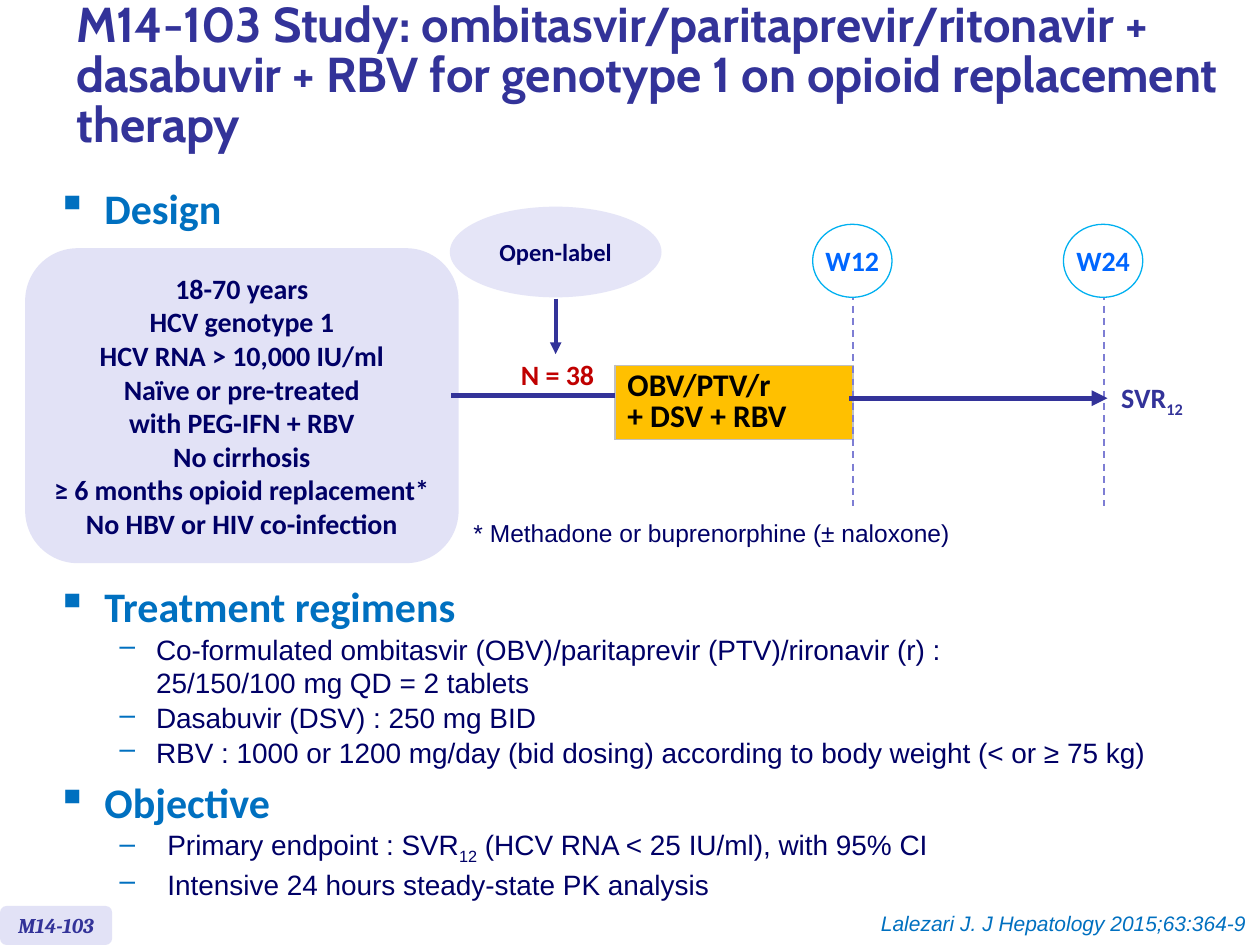
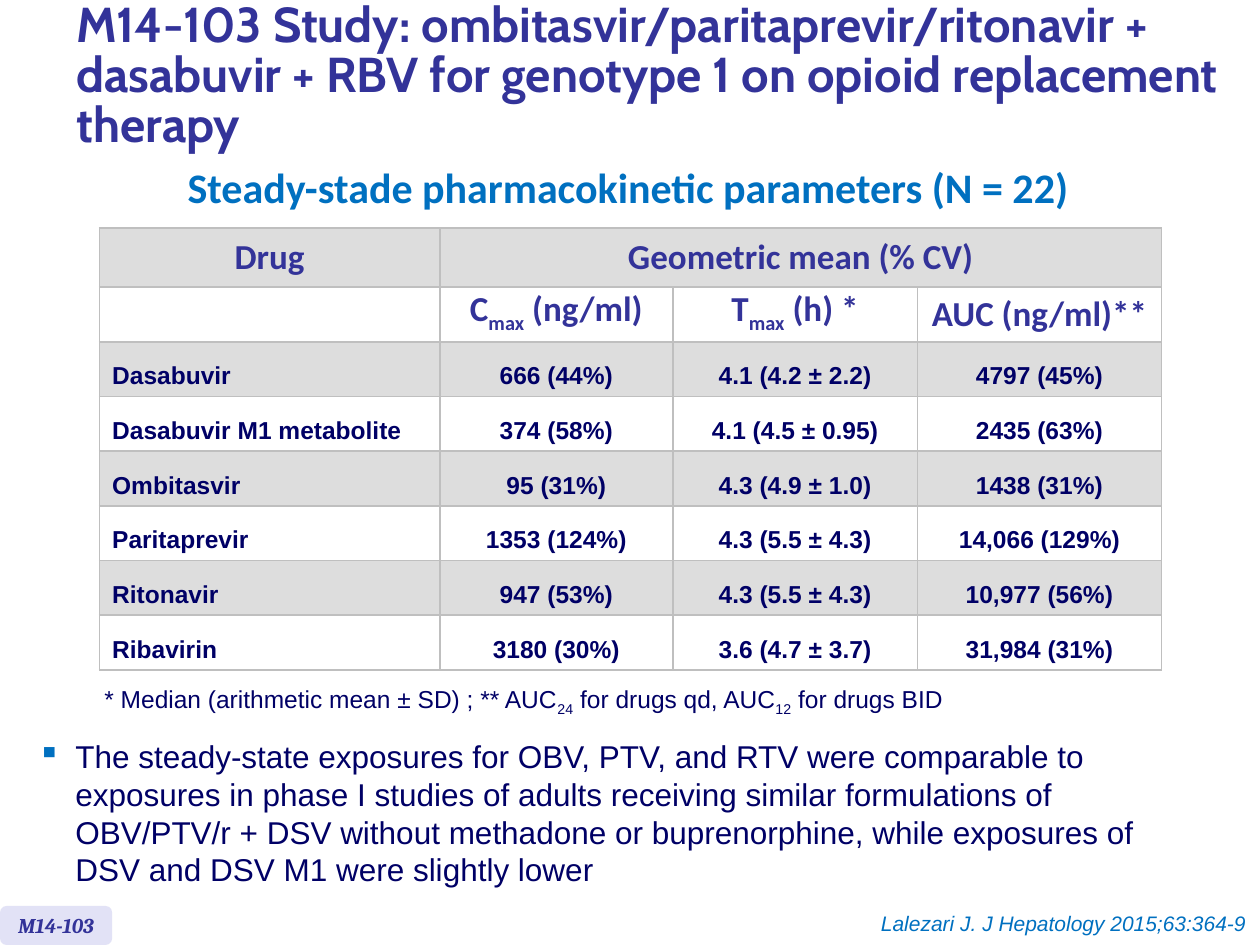
from copy import deepcopy
from dataclasses import dataclass, replace

from lxml import etree
from pptx import Presentation
from pptx import util as u
from pptx.dml.color import RGBColor
from pptx.enum import dml, shapes, text
from pptx.oxml import ns

PX = 9144  # EMU per px, 100 px to the inch

# Colours
INDIGO = RGBColor(0x33, 0x33, 0x99)
NAVY = RGBColor(0x00, 0x00, 0x66)
BLUE = RGBColor(0x00, 0x70, 0xC0)
SKY = RGBColor(0x00, 0xB0, 0xF0)
WEEK_BLUE = RGBColor(0x00, 0x66, 0xFF)
VIOLET = RGBColor(0x7E, 0x7E, 0xD4)
LAVENDER = RGBColor(0xE2, 0xE2, 0xF6)
PALE_LAVENDER = RGBColor(0xE5, 0xE5, 0xF7)
RED = RGBColor(0xC0, 0x00, 0x00)
AMBER = RGBColor(0xFF, 0xC0, 0x00)
BLACK = RGBColor(0x00, 0x00, 0x00)
WHITE = RGBColor(0xFF, 0xFF, 0xFF)
BAND_GREY = RGBColor(0xDD, 0xDD, 0xDD)
GRID_GREY = RGBColor(0xBF, 0xBF, 0xBF)
BOX_GREY = RGBColor(0xC0, 0xC0, 0xC0)

LEFT, CENTER, RIGHT = text.PP_ALIGN.LEFT, text.PP_ALIGN.CENTER, text.PP_ALIGN.RIGHT
MIDDLE = text.MSO_ANCHOR.MIDDLE
OVAL, ROUNDED = shapes.MSO_SHAPE.OVAL, shapes.MSO_SHAPE.ROUNDED_RECTANGLE


@dataclass(frozen=True)
class Style:
    """Look of one paragraph; indent is (text, bullet offset) in px."""
    size: int
    color: RGBColor
    font: str = "Calibri"
    bold: bool = True
    italic: bool = False
    align: object = LEFT
    bullet: str = ""
    indent: tuple = (0, 0)
    level: int = 0
    leading: object = None
    before: float = 0
    after: float = 0


TITLE = Style(28, INDIGO, "Cabin", leading=0.85)
HEADING = Style(24, BLUE, bullet="▪", indent=(38, 38), before=0.7)
ITEM = Style(16, NAVY, "Arial", False, bullet="–", indent=(79, 29), level=1, before=0.7)
WIDE_ITEM = replace(ITEM, indent=(88, 38))
BODY = Style(18, NAVY, "Arial", False, bullet="▪", indent=(30, 30))
NOTE = Style(14, NAVY, "Arial", False)
LABEL = Style(16, NAVY, align=CENTER)
TABLE_HEAD = Style(20, INDIGO, align=CENTER, leading=u.Pt(24), after=6)
TABLE_BODY = replace(TABLE_HEAD, size=14, color=NAVY, font="Arial")


class Deck:
    def __init__(self):
        self.prs = Presentation()
        self.prs.slide_width, self.prs.slide_height = 1000 * PX, 750 * PX
        self.s = None

    def slide(self):
        """Start a slide with the shared title, study tag and reference."""
        self.s = self.prs.slides.add_slide(self.prs.slide_layouts[6])
        title = ("M14-103 Study: ombitasvir/paritaprevir/ritonavir + dasabuvir + RBV "
                 "for genotype 1 on opioid replacement therapy")
        self.text((51, 8, 948, 107), [(title, TITLE)], anchor=MIDDLE)
        tag = replace(LABEL, size=12, color=INDIGO, font="Cambria", italic=True)
        self.shape(ROUNDED, (0, 719, 89, 31), LAVENDER, ["M14-103"], tag)
        ref = Style(12, BLUE, "Arial", False, True, RIGHT)
        self.text((682, 718, 317, 30), [("Lalezari J. J Hepatology 2015;63:364-9", ref)], wrap=False)

    def paragraph(self, p, words, st):
        """Fill a paragraph; parts between underscores are subscripts."""
        if "_" in words:
            for i, part in enumerate(words.split("_")):
                r = p.add_run()
                r.text = part
                if i % 2:
                    r.font._element.set("baseline", "-25000")
        else:
            p.text = words
        p.alignment, p.level = st.align, st.level
        p.space_before, p.space_after = u.Pt(st.before), u.Pt(st.after)
        if st.leading:
            p.line_spacing = st.leading
        if st.bullet:
            pPr = p._p.get_or_add_pPr()
            pPr.set("marL", str(st.indent[0] * PX))
            pPr.set("indent", str(-st.indent[1] * PX))
            clr = etree.SubElement(pPr, ns.qn("a:buClr"))
            etree.SubElement(clr, ns.qn("a:srgbClr"), val=str(BLUE))
            etree.SubElement(pPr, ns.qn("a:buChar"), char=st.bullet)
        for r in p.runs:
            f = r.font
            f.name, f.size, f.bold, f.italic = st.font, u.Pt(st.size), st.bold, st.italic
            f.color.rgb = st.color
        for br in p._p.findall(ns.qn("a:br")):
            br.append(deepcopy(p.runs[0].font._element))

    def fill_frame(self, tf, lines):
        for i, (words, st) in enumerate(lines):
            p = tf.add_paragraph() if i else tf.paragraphs[0]
            self.paragraph(p, words, st if i else replace(st, before=0))

    def text(self, box, lines, wrap=True, anchor=text.MSO_ANCHOR.TOP, pad=5):
        tf = self.s.shapes.add_textbox(*(v * PX for v in box)).text_frame
        tf.word_wrap, tf.vertical_anchor = wrap, anchor
        tf.margin_top = tf.margin_bottom = pad * PX
        if not wrap:
            tf.auto_size = text.MSO_AUTO_SIZE.SHAPE_TO_FIT_TEXT
        self.fill_frame(tf, lines)

    def shape(self, kind, box, fill, lines, st, line=None):
        sp = self.s.shapes.add_shape(kind, *(v * PX for v in box))
        sp.shadow.inherit = False
        sp.fill.solid()
        sp.fill.fore_color.rgb = fill
        if line:
            sp.line.color.rgb, sp.line.width = line, u.Pt(0.75)
        else:
            sp.line.fill.background()
        sp.text_frame.word_wrap, sp.text_frame.vertical_anchor = False, MIDDLE
        self.fill_frame(sp.text_frame, [(words, st) for words in lines])

    def line(self, x1, y1, x2, y2, color, width, arrow=False, dash=False):
        c = self.s.shapes.add_connector(
            shapes.MSO_CONNECTOR.STRAIGHT, *(v * PX for v in (x1, y1, x2, y2)))
        c.line.color.rgb, c.line.width = color, u.Pt(width)
        if dash:
            c.line.dash_style = dml.MSO_LINE.DASH
        if arrow:
            etree.SubElement(c.line._get_or_add_ln(), ns.qn("a:tailEnd"), type="triangle")
        etree.SubElement(c._element.spPr, ns.qn("a:effectLst"))

    def table(self, left, top, widths, heights, border):
        frame = self.s.shapes.add_table(len(heights), len(widths), left * PX, top * PX,
                                        sum(widths) * PX, sum(heights) * PX)
        for col, w in zip(frame.table.columns, widths):
            col.width = w * PX
        for row, h in zip(frame.table.rows, heights):
            row.height = h * PX
        for cell in frame.table.iter_cells():
            tcPr = cell._tc.get_or_add_tcPr()
            for side in "LRTB":
                ln = etree.SubElement(tcPr, ns.qn("a:ln" + side), w=str(u.Pt(1)))
                fill = etree.SubElement(ln, ns.qn("a:solidFill"))
                etree.SubElement(fill, ns.qn("a:srgbClr"), val=str(border))
        return frame.table

    def cell(self, cell, words, st, fill):
        cell.fill.solid()
        cell.fill.fore_color.rgb = fill
        cell.vertical_anchor = MIDDLE
        if words:
            self.paragraph(cell.text_frame.paragraphs[0], words, st)


def design_slide(d):
    d.slide()

    # Study population and allocation
    d.text((35, 140, 152, 50), [("Design", HEADING)], wrap=False)
    d.line(441, 237, 441, 281, INDIGO, 2.25, arrow=True)
    d.shape(OVAL, (357, 164, 168, 72), PALE_LAVENDER, ["Open-label"], replace(LABEL, size=14))
    criteria = ["18-70 years", "HCV genotype 1", "HCV RNA > 10,000 IU/ml", "Naïve or pre-treated",
                "with PEG-IFN + RBV", "No cirrhosis", "≥ 6 months opioid replacement*",
                "No HBV or HIV co-infection"]
    d.shape(ROUNDED, (20, 197, 344, 250), LAVENDER, criteria, LABEL)
    d.text((366, 406, 480, 34), [("* Methadone or buprenorphine (± naloxone)", NOTE)])

    # Treatment arm
    arm = d.table(488, 290, [189], [59], BOX_GREY)
    d.cell(arm.cell(0, 0), "OBV/PTV/r \v+ DSV + RBV", Style(18, BLACK, leading=0.8), AMBER)
    d.line(358, 314, 488, 314, INDIGO, 3)
    d.text((403, 279, 79, 37), [("N = 38", replace(LABEL, color=RED))], wrap=False)

    # Week markers and follow-up
    for week, x in (("W12", 677), ("W24", 876)):
        d.line(x, 204, x, 402, VIOLET, 1, dash=True)
        d.shape(OVAL, (x - 32, 178, 63, 58), WHITE, [week], replace(LABEL, color=WEEK_BLUE), SKY)
    d.line(674, 316, 879, 316, INDIGO, 3, arrow=True)
    d.text((880, 297, 72, 37), [("SVR_12_", Style(16, INDIGO))], wrap=False)

    # Regimens and objective
    d.text((35, 456, 965, 124), [
        ("Treatment regimens", HEADING),
        ("Co-formulated ombitasvir (OBV)/paritaprevir (PTV)/rironavir (r) : \v"
         "25/150/100 mg QD = 2 tablets", ITEM),
        ("Dasabuvir (DSV) : 250 mg BID", ITEM),
        ("RBV : 1000 or 1200 mg/day (bid dosing) according to body weight (< or ≥ 75 kg)", ITEM)])
    d.text((35, 611, 965, 110), [
        ("Objective", HEADING),
        ("Primary endpoint : SVR_12_ (HCV RNA < 25 IU/ml), with 95% CI", WIDE_ITEM),
        ("Intensive 24 hours steady-state PK analysis", WIDE_ITEM)])


def pharmacokinetics_slide(d):
    d.slide()
    heading = Style(24, BLUE, align=CENTER, leading=u.Pt(15.2))
    d.text((135, 139, 727, 37), [("Steady-stade pharmacokinetic parameters (N = 22)", heading)],
           wrap=False, anchor=MIDDLE, pad=8)

    # Parameters by drug
    rows = [
        ("Drug", "Geometric mean (% CV)", "", ""),
        ("", "C_max_ (ng/ml)", "T_max_ (h) *", "AUC (ng/ml)**"),
        ("Dasabuvir", "666 (44%)", "4.1 (4.2 ± 2.2)", "4797 (45%)"),
        ("Dasabuvir M1 metabolite", "374 (58%)", "4.1 (4.5 ± 0.95)", "2435 (63%)"),
        ("Ombitasvir", "95 (31%)", "4.3 (4.9 ± 1.0)", "1438 (31%)"),
        ("Paritaprevir", "1353 (124%)", "4.3 (5.5 ± 4.3)", "14,066 (129%)"),
        ("Ritonavir", "947 (53%)", "4.3 (5.5 ± 4.3)", "10,977 (56%)"),
        ("Ribavirin", "3180 (30%)", "3.6 (4.7 ± 3.7)", "31,984 (31%)"),
    ]
    tbl = d.table(79, 181, [270, 185, 194, 194], [47] + [43] * 7, GRID_GREY)
    tbl.cell(0, 1).merge(tbl.cell(0, 3))
    for i, row in enumerate(rows):
        for j, words in enumerate(row):
            st = TABLE_HEAD if i < 2 else replace(TABLE_BODY, align=CENTER if j else LEFT)
            d.cell(tbl.cell(i, j), words, st, WHITE if i % 2 else BAND_GREY)

    # Footnote and conclusion
    d.text((73, 538, 693, 34), [("* Median (arithmetic mean ± SD) ; ** AUC_24_ for drugs qd, "
                                 "AUC_12_ for drugs BID", NOTE)], wrap=False)
    d.text((20, 580, 937, 121), [(
        "The steady-state exposures for OBV, PTV, and RTV were comparable to exposures in phase I "
        "studies of adults receiving similar formulations of OBV/PTV/r + DSV without methadone or "
        "buprenorphine, while exposures of DSV and DSV M1 were slightly lower", BODY)])


def main():
    d = Deck()
    design_slide(d)
    pharmacokinetics_slide(d)
    d.prs.save("out.pptx")


if __name__ == "__main__":
    main()
